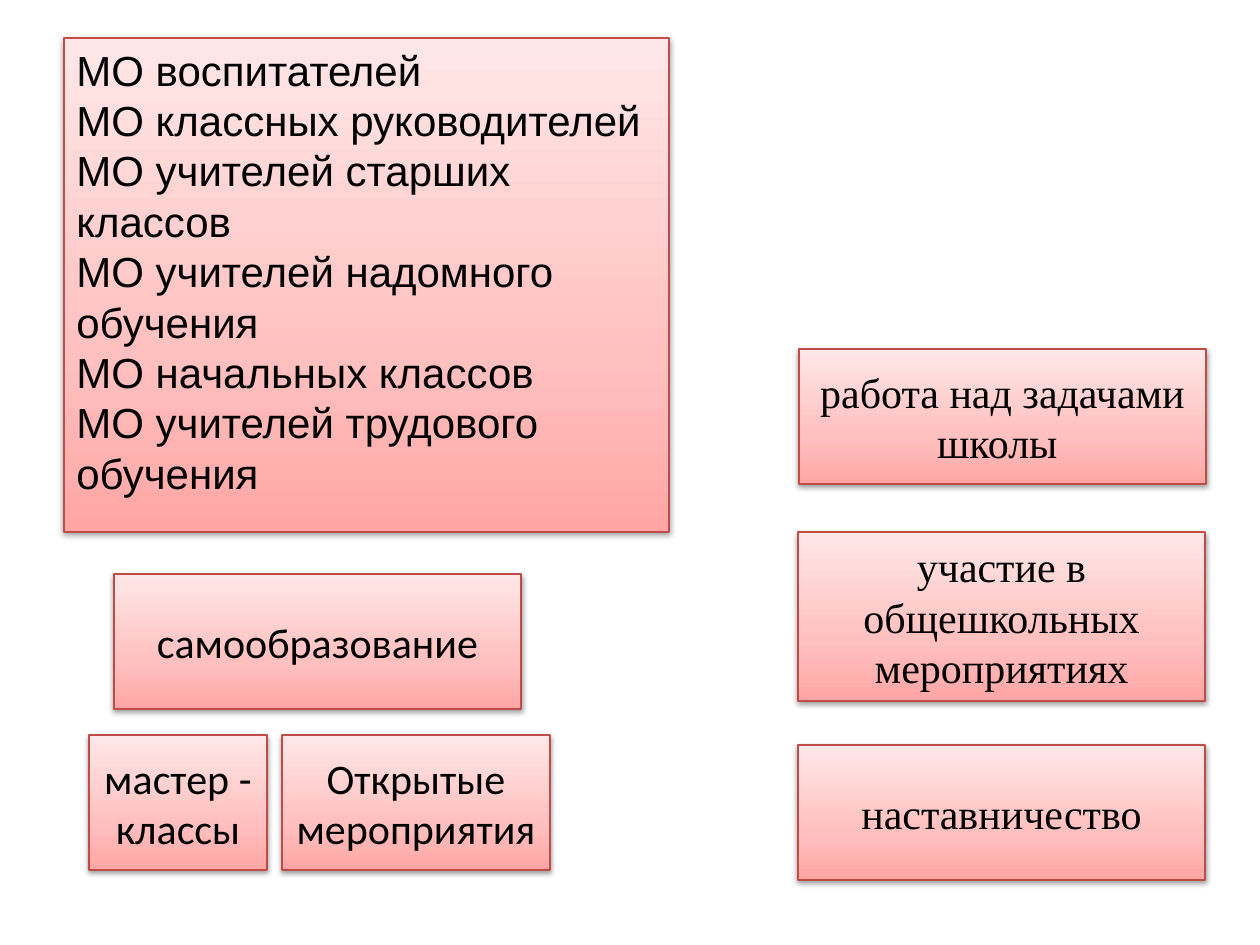
from copy import deepcopy
from lxml.etree import SubElement as Sub
from pptx import Presentation
from pptx.dml.color import RGBColor as Rgb
from pptx.enum.shapes import MSO_SHAPE as Kind
from pptx.enum.text import MSO_ANCHOR as Anchor, PP_ALIGN as Align
from pptx.oxml.ns import qn
from pptx.util import Pt

SCALE = 914400 / 126
BLACK = Rgb(0x00, 0x00, 0x00)
EDGE = Rgb(0xBF, 0x4C, 0x48)
ROSE = Rgb(0xFF, 0xA6, 0xA5)
PINK = Rgb(0xFF, 0xC0, 0xBF)
PALE = Rgb(0xFF, 0xE7, 0xE7)
STOPS = [(0, ROSE), (0.35, PINK), (1, PALE)]
SHADE = {"blurRad": "40000", "dist": "20000", "dir": "5400000", "rotWithShape": "0"}

SANS, BODY, SERIF = "Arial", "Calibri", "Times New Roman"
GROUPS = [
    "МО воспитателей",
    "МО классных руководителей",
    "МО учителей старших классов",
    "МО учителей надомного обучения",
    "МО начальных классов",
    "МО учителей трудового обучения",
]
WIDE, HIGH = 407, 135
RIGHT, BASE = 798, 735
CARDS = [
    ((89, BASE, 178, HIGH), BODY, "мастер - классы"),
    ((114, 574, WIDE, HIGH), BODY, "самообразование"),
    ((RIGHT, 745, WIDE, HIGH), SERIF, "наставничество"),
    ((282, BASE, 268, HIGH), BODY, "Открытые мероприятия"),
    ((RIGHT + 1, 349, WIDE, HIGH), SERIF, "работа над задачами школы "),
    ((RIGHT, 532, WIDE, 169), SERIF, "участие в общешкольных мероприятиях"),
]


def px(n):
    """Turn px into EMU."""
    return round(n * SCALE)


def put(item, form):
    """Set each attribute named in a dict."""
    for key, val in form.items():
        setattr(item, key, val)


class Deck:
    """Hold the style and the current slide."""

    def __init__(self, wide, high):
        """Open a deck with one blank slide."""
        self.show = Presentation()
        put(self.show, {"slide_width": px(wide), "slide_height": px(high)})
        self.slide = self.show.slides.add_slide(self.show.slide_layouts[6])
        self.font = {"size": Pt(24)}

    def paint(self, shape):
        """Give a shape its gradient, edge and soft shadow."""
        fill = shape.fill
        fill.gradient()
        fill.gradient_angle = 90
        props = shape._element.spPr
        stops = props.find(".//" + qn("a:gsLst"))
        stops.append(deepcopy(stops[0]))
        for stop, (pos, tint) in zip(fill.gradient_stops, STOPS):
            stop.position = pos
            stop.color.rgb = tint
        shape.line.color.rgb = EDGE
        shape.line.width = Pt(0.75)
        shape.shadow.inherit = False
        glow = Sub(props.find(qn("a:effectLst")), qn("a:outerShdw"), SHADE)
        tone = Sub(glow, qn("a:srgbClr"), val="000000")
        Sub(tone, qn("a:alpha"), val="38000")

    def card(self, area, face, lines, align=Align.CENTER, anchor=Anchor.MIDDLE):
        """Add a box with one paragraph a line."""
        shape = self.slide.shapes.add_shape(Kind.RECTANGLE, *map(px, area))
        self.paint(shape)
        frame = shape.text_frame
        put(frame, {"word_wrap": True, "vertical_anchor": anchor})
        frame.text = "\n".join(lines)
        for para in frame.paragraphs:
            para.alignment = align
            font = para.runs[0].font
            put(font, {**self.font, "name": face})
            font.color.rgb = BLACK

    def save(self):
        """Write the file."""
        self.show.save("out.pptx")


def main():
    """Build the slide."""
    deck = Deck(1260, 945)
    deck.card((64, 38, 605, 494), SANS, GROUPS, Align.LEFT, Anchor.TOP)
    for area, face, text in CARDS:
        deck.card(area, face, [text])
    deck.save()


if __name__ == "__main__":
    main()
